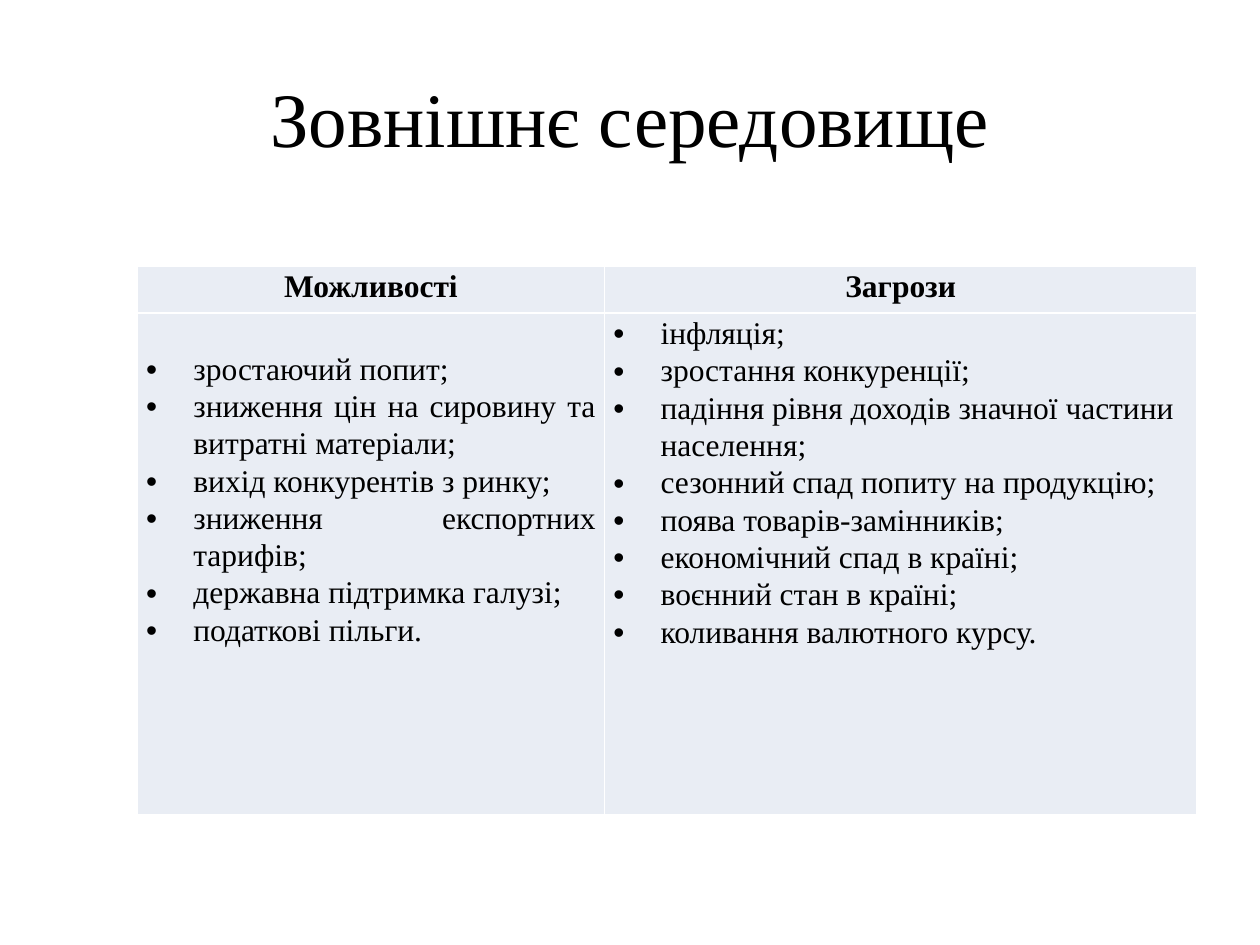
"""Build the slide that lists opportunities and threats of the external environment."""
from lxml import etree
from pptx import Presentation
from pptx.dml.color import RGBColor
from pptx.enum import text
from pptx.oxml import ns
from pptx.util import Pt

TITLE = "Зовнішнє середовище"
COLUMNS = [
    {"head": "Можливості", "width": 267, "align": text.PP_ALIGN.JUSTIFY, "top": 21,
     "items": ["зростаючий попит;",
               "зниження цін на сировину та витратні матеріали;",
               "вихід конкурентів з ринку;",
               "зниження експортних тарифів;",
               "державна підтримка галузі;",
               "податкові пільги."]},
    {"head": "Загрози", "width": 338.5, "align": text.PP_ALIGN.LEFT, "top": 0.7,
     "items": ["інфляція;",
               "зростання конкуренції;",
               "падіння рівня доходів значної частини населення;",
               "сезонний спад попиту на продукцію;",
               "поява товарів-замінників;",
               "економічний спад в країні;",
               "воєнний стан в країні;",
               "коливання валютного курсу."]},
]
ROW_HEIGHTS = [26.8, 286.8]
TABLE_LEFT, TABLE_TOP = 78.5, 152
THEME = {"font": "Times New Roman", "title": 44, "body": 18, "ink": "000000",
         "cell": "E9EDF4", "border": "FFFFFF", "spacing": 1.07,
         "indent": 27, "tab": 36, "side": 5}


def add_xml(parent, tag, **attrs):
    return etree.SubElement(parent, ns.qn(tag), {k: str(v) for k, v in attrs.items()})


def style(p, size, align, bold=False):
    p.alignment = align
    for r in p.runs:
        r.font.name, r.font.size, r.font.bold = THEME["font"], Pt(size), bold
        r.font.color.rgb = RGBColor.from_string(THEME["ink"])


def add_bullet(p):
    pPr = p._p.get_or_add_pPr()
    pPr.set("marL", str(Pt(THEME["indent"])))
    pPr.set("indent", str(-Pt(THEME["indent"])))
    add_xml(pPr, "a:buFont", typeface="Arial")
    add_xml(pPr, "a:buChar", char="•")
    add_xml(add_xml(pPr, "a:tabLst"), "a:tab", pos=Pt(THEME["tab"]), algn="l")


def fill_cell(cell, lines, align, top=0.7, heading=False):
    cell.margin_left = cell.margin_right = Pt(THEME["side"])
    cell.margin_top, cell.margin_bottom = Pt(top), Pt(0)
    cell.vertical_anchor = text.MSO_ANCHOR.TOP
    tcPr = cell._tc.get_or_add_tcPr()
    for side in "LRTB":
        ln = add_xml(tcPr, f"a:ln{side}", w=Pt(1))
        add_xml(add_xml(ln, "a:solidFill"), "a:srgbClr", val=THEME["border"])
    cell.fill.solid()
    cell.fill.fore_color.rgb = RGBColor.from_string(THEME["cell"])
    cell.text_frame.text = "\n".join(lines)
    for p in cell.text_frame.paragraphs:
        if not heading:
            add_bullet(p)
        p.line_spacing = THEME["spacing"]
        style(p, THEME["body"], align, heading)


def main():
    prs = Presentation()
    prs.slide_width, prs.slide_height = Pt(720), Pt(540)
    s = prs.slides.add_slide(prs.slide_layouts[5])

    title = s.shapes.title
    title.left, title.top, title.width, title.height = Pt(36), Pt(21.6), Pt(648), Pt(90)
    title.text_frame.text = TITLE
    title.text_frame.vertical_anchor = text.MSO_ANCHOR.MIDDLE
    style(title.text_frame.paragraphs[0], THEME["title"], text.PP_ALIGN.CENTER)

    width = sum(c["width"] for c in COLUMNS)
    table = s.shapes.add_table(len(ROW_HEIGHTS), len(COLUMNS), Pt(TABLE_LEFT), Pt(TABLE_TOP),
                               Pt(width), Pt(sum(ROW_HEIGHTS))).table
    table.first_row = table.horz_banding = False
    for row, height in zip(table.rows, ROW_HEIGHTS):
        row.height = Pt(height)
    for i, c in enumerate(COLUMNS):
        table.columns[i].width = Pt(c["width"])
        fill_cell(table.cell(0, i), [c["head"]], text.PP_ALIGN.CENTER, heading=True)
        fill_cell(table.cell(1, i), c["items"], c["align"], c["top"])

    prs.save("out.pptx")


if __name__ == "__main__":
    main()
